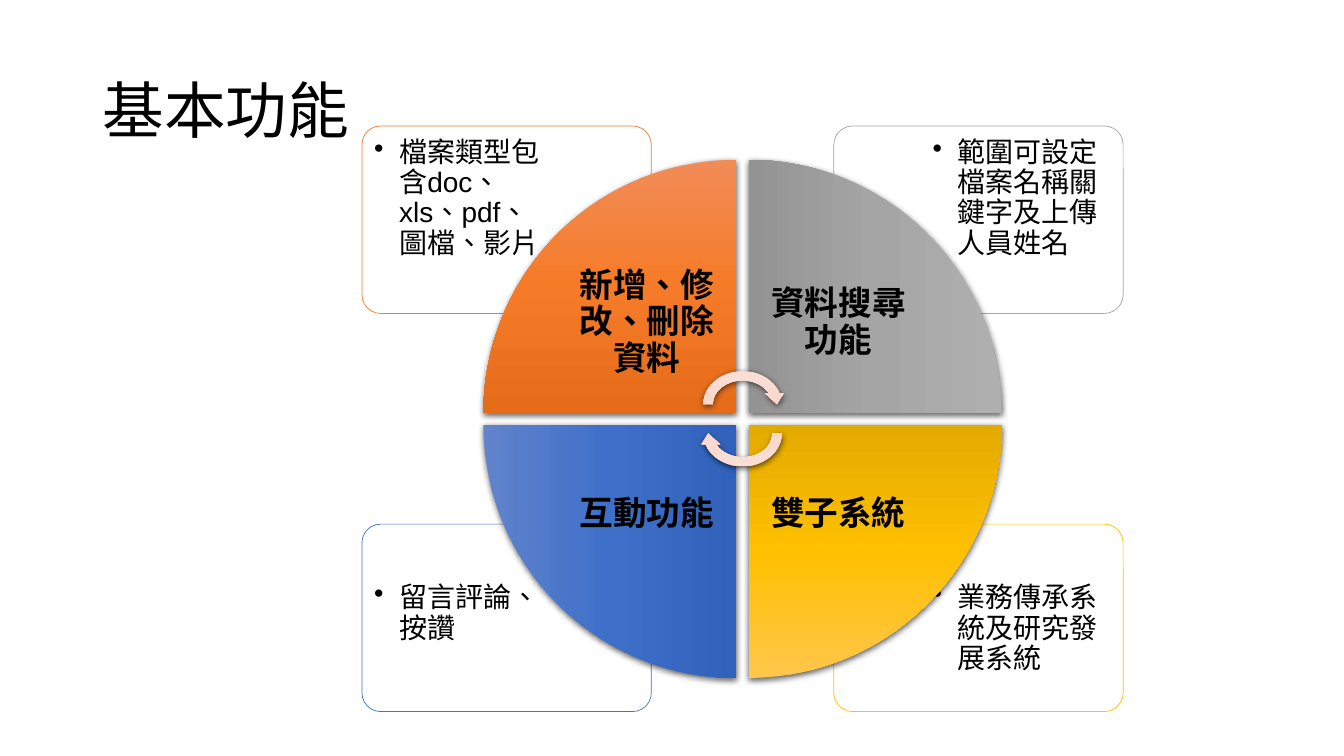
import pptx
import pptx.util
import pptx.dml.color
import pptx.enum.lang
import pptx.enum.shapes
import pptx.enum.text
import pptx.oxml
import pptx.oxml.ns

Inches, Pt = pptx.util.Inches, pptx.util.Pt
RGB = pptx.dml.color.RGBColor
SHAPE = pptx.enum.shapes.MSO_SHAPE
ALIGN = pptx.enum.text.PP_ALIGN
ANCHOR = pptx.enum.text.MSO_ANCHOR
qn = pptx.oxml.ns.qn
NS = pptx.oxml.ns.nsdecls("a")

WHITE, BLACK = RGB(255, 255, 255), RGB(0, 0, 0)
ORANGE, GRAY = RGB(0xED, 0x7D, 0x31), RGB(0xA5, 0xA5, 0xA5)
BLUE, GOLD = RGB(0x44, 0x72, 0xC4), RGB(0xFF, 0xC0, 0x00)
ORANGE_FADE = (RGB(0xF1, 0x8C, 0x57), RGB(0xF6, 0x7B, 0x28), RGB(0xE5, 0x6C, 0x19))
GRAY_FADE = (RGB(0xAF, 0xAF, 0xAF), RGB(0xA5, 0xA5, 0xA5), RGB(0x93, 0x93, 0x93))
GOLD_FADE = (RGB(0xFF, 0xC6, 0x4B), RGB(0xFF, 0xC0, 0x00), RGB(0xE3, 0xAB, 0x00))
BLUE_FADE = (RGB(0x61, 0x83, 0xCB), RGB(0x3E, 0x70, 0xCA), RGB(0x30, 0x62, 0xBB))
ARROW_FADE = (RGB(0xFA, 0xE0, 0xD8), RGB(0xFA, 0xD6, 0xCB), RGB(0xE2, 0xBC, 0xB1))

# column, row, rotation, line colour, fade, wedge label, card text
QUADRANTS = [
    (0, 0, 0, ORANGE, ORANGE_FADE, "新增、修改、刪除資料", "檔案類型包含doc、xls、pdf、圖檔、影片"),
    (1, 0, 90, GRAY, GRAY_FADE, "資料搜尋功能", "範圍可設定檔案名稱關鍵字及上傳人員姓名"),
    (1, 1, 180, GOLD, GOLD_FADE, "雙子系統", "業務傳承系統及研究發展系統"),
    (0, 1, 270, BLUE, BLUE_FADE, "互動功能", "留言評論、按讚"),
]


def add_text(s, text, x, y, w, h, size=20, bold=False, align=ALIGN.LEFT,
             anchor=ANCHOR.TOP, inset=0.08, bullet=False):
    tf = s.shapes.add_textbox(Inches(x), Inches(y), Inches(w), Inches(h)).text_frame
    tf.word_wrap = True
    tf.vertical_anchor = anchor
    tf.margin_left = tf.margin_right = tf.margin_top = tf.margin_bottom = Inches(inset)
    p = tf.paragraphs[0]
    p.alignment, p.line_spacing = align, 0.9
    r = p.add_run()
    r.text = text
    r.font.name, r.font.size, r.font.bold = "Arial", Pt(size), bold
    r.font.color.rgb = BLACK
    r.font.language_id = pptx.enum.lang.MSO_LANGUAGE_ID.TRADITIONAL_CHINESE
    if bullet:
        pPr = p._p.get_or_add_pPr()
        pPr.set("marL", str(Inches(0.25)))
        pPr.set("indent", str(-Inches(0.25)))
        pPr.append(pptx.oxml.parse_xml(f'<a:buChar {NS} char="•"/>'))


def add_faded(s, kind, x, y, w, h, rotation, fade):
    """Preset shape with a vertical three-colour gradient and a soft shadow."""
    sp = s.shapes.add_shape(kind, Inches(x), Inches(y), Inches(w), Inches(h))
    sp.rotation = rotation
    sp.line.fill.background()
    stops = "".join(f'<a:gs pos="{i * 50000}"><a:srgbClr val="{c}"/></a:gs>'
                    for i, c in enumerate(fade))
    spPr = sp._element.spPr
    spPr.find(qn("a:ln")).addprevious(pptx.oxml.parse_xml(
        f'<a:gradFill {NS} rotWithShape="1"><a:gsLst>{stops}</a:gsLst>'
        '<a:lin ang="5400000" scaled="0"/></a:gradFill>'))
    spPr.append(pptx.oxml.parse_xml(
        f'<a:effectLst {NS}><a:outerShdw blurRad="{Pt(4.5)}" dist="{Pt(1.5)}" dir="5400000" '
        'algn="ctr" rotWithShape="0"><a:srgbClr val="000000"><a:alpha val="63000"/>'
        '</a:srgbClr></a:outerShdw></a:effectLst>'))


def add_card(s, x, y, w, h, col, row, color, text):
    """Rounded card whose text sits in its outer corner."""
    sp = s.shapes.add_shape(SHAPE.ROUNDED_RECTANGLE, Inches(x), Inches(y), Inches(w), Inches(h))
    sp.adjustments[0] = 0.1
    sp.shadow.inherit = False
    sp.fill.solid()
    sp.fill.fore_color.rgb = WHITE
    sp.fill._xPr.find(qn("a:solidFill"))[0].append(
        pptx.oxml.parse_xml(f'<a:alpha {NS} val="90000"/>'))
    sp.line.color.rgb, sp.line.width = color, Pt(0.5)
    pad, tw, th = 0.04, 1.93, 1.31
    add_text(s, text, x + (w - tw - pad if col else pad), y + (h - th - pad if row else pad),
             tw, th, bullet=True)


def add_wedge(s, x, y, size, col, row, rotation, fade, label):
    """Quarter disc whose label sits in its inner corner."""
    add_faded(s, SHAPE.PIE_WEDGE, x, y, size, size, rotation, fade)
    side = 1.78
    add_text(s, label, x + (0 if col else size - side), y + (0 if row else size - side),
             side, side, size=24, bold=True, align=ALIGN.CENTER, anchor=ANCHOR.MIDDLE, inset=0.19)


def add_cycle(s, x, y, w, h):
    """Cards behind, four wedges, then two arrows around the centre."""
    card_w, card_h = 2.87, 1.86
    wedge, gap = 2.51, 0.12
    cx, cy = x + w / 2, y + h / 2
    for col, row, _, color, _, _, text in QUADRANTS:
        add_card(s, x + col * (w - card_w), y + row * (h - card_h), card_w, card_h,
                 col, row, color, text)
    left, top = cx - wedge - gap / 2, cy - wedge - gap / 2
    for col, row, rotation, _, fade, label, _ in QUADRANTS:
        add_wedge(s, left + col * (wedge + gap), top + row * (wedge + gap), wedge,
                  col, row, rotation, fade, label)
    arrow_w, arrow_h, shift = 0.87, 0.75, 0.145
    for rotation, dy in ((0, -shift), (180, shift)):
        add_faded(s, SHAPE.CIRCULAR_ARROW, cx - arrow_w / 2, cy - arrow_h / 2 + dy,
                  arrow_w, arrow_h, rotation, ARROW_FADE)


def main():
    prs = pptx.Presentation()
    prs.slide_width, prs.slide_height = Inches(13.33), Inches(7.5)
    s = prs.slides.add_slide(prs.slide_layouts[6])
    s.background.fill.solid()
    s.background.fill.fore_color.rgb = WHITE
    # Title
    add_text(s, "基本功能", 0.92, 0.4, 11.5, 1.45, size=44, anchor=ANCHOR.MIDDLE, inset=0.1)
    # Cycle diagram
    add_cycle(s, 3.59, 1.25, 7.55, 5.81)
    prs.save("out.pptx")


if __name__ == "__main__":
    main()
